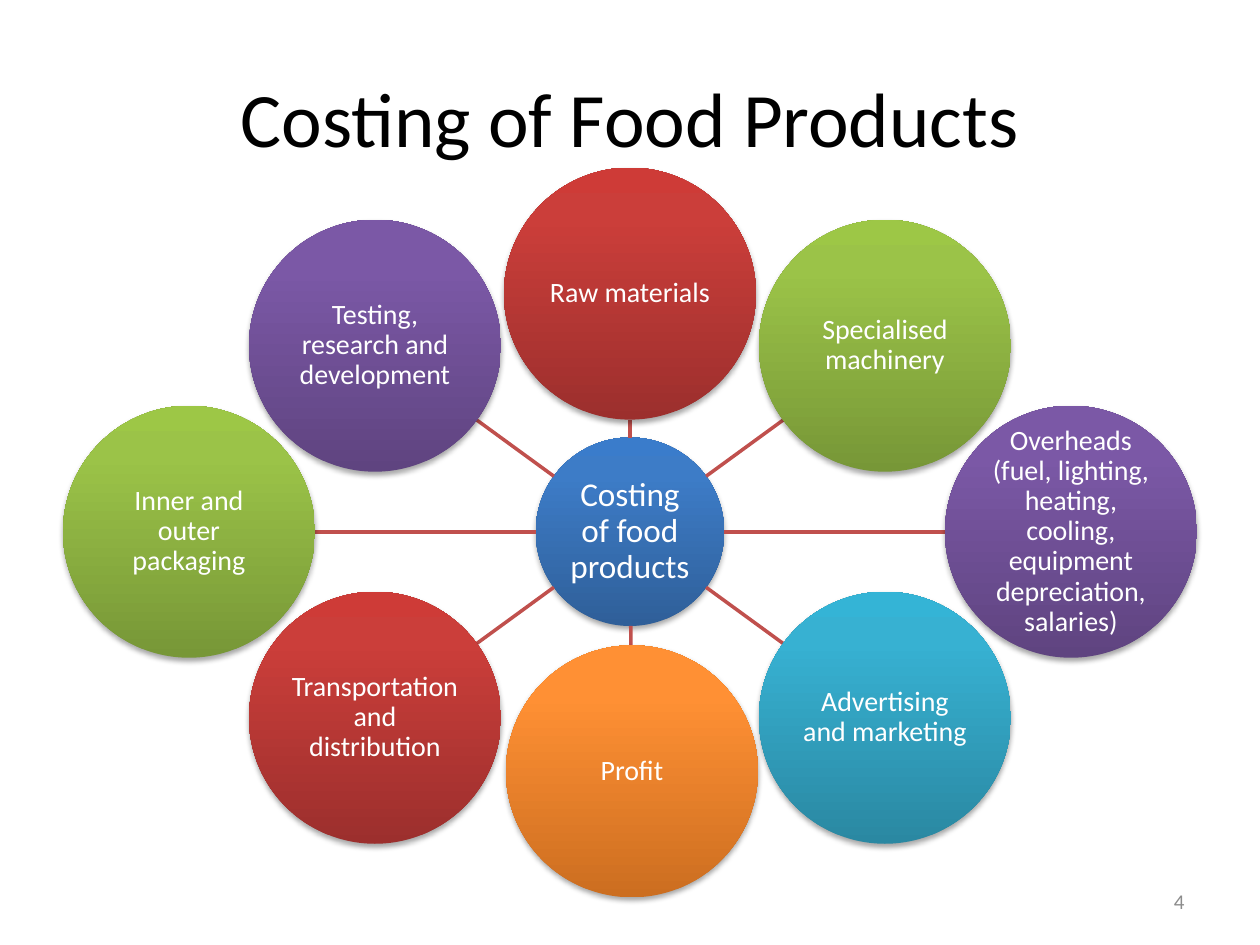
"""Build a slide with a hub of food product costs and the circles around it."""
from copy import deepcopy
from dataclasses import dataclass
from math import hypot

from lxml import etree
from pptx import Presentation, oxml
from pptx import util as u
from pptx.dml import color
from pptx.enum import shapes, text
from pptx.oxml import ns

FONT = "Calibri"
HUB_X, HUB_Y = 12.7, 10.72
HUB_RADIUS, COST_RADIUS = 1.9, 2.54
STEP_X, STEP_Y = 5.14, 3.75
SIDE_X = 8.89
STOPS = (0, 0.8, 1)

BLUE = ("2F5F99", "3D7CC7", "3A7CCB")
RED = ("9C2F2D", "CB3E3A", "CE3B37")
GREEN = ("779737", "9BC348", "9DC746")
PURPLE = ("5F4480", "7B58A6", "7C57A8")
TEAL = ("2A88A2", "37B1D2", "34B4D6")
ORANGE = ("CC6E20", "FF9034", "FF9136")

SHADOW = (
    f'<a:outerShdw {ns.nsdecls("a")} blurRad="40000" dist="23000" dir="5400000" '
    'rotWithShape="0"><a:srgbClr val="000000"><a:alpha val="35000"/>'
    "</a:srgbClr></a:outerShdw>"
)


@dataclass
class Cost:
    label: str
    dx: float
    dy: float
    shades: tuple[str, str, str]


COSTS = [
    Cost("Raw materials", 0, -4.8, RED),
    Cost("Specialised machinery", STEP_X, -STEP_Y, GREEN),
    Cost("Overheads (fuel, lighting, heating, cooling, equipment depreciation, salaries)",
         SIDE_X, 0, PURPLE),
    Cost("Advertising and marketing", STEP_X, STEP_Y, TEAL),
    Cost("Profit", 0.04, 4.83, ORANGE),
    Cost("Transportation and distribution", -STEP_X, STEP_Y, RED),
    Cost("Inner and outer packaging", -SIDE_X, 0, GREEN),
    Cost("Testing, research and development", -STEP_X, -STEP_Y, PURPLE),
]


def rgb(value: str) -> color.RGBColor:
    return color.RGBColor.from_string(value)


def write(box, words: str, *, size: float, hue: str, align=text.PP_ALIGN.CENTER,
          spacing: float | None = None, inset: float | None = None) -> None:
    frame = box.text_frame
    frame.word_wrap = True
    frame.vertical_anchor = text.MSO_ANCHOR.MIDDLE
    if inset is not None:
        frame.margin_left = frame.margin_right = u.Cm(inset)
        frame.margin_top = frame.margin_bottom = u.Cm(inset)
    para = frame.paragraphs[0]
    para.alignment = align
    if spacing is not None:
        para.line_spacing = spacing
    span = para.add_run()
    span.text = words
    span.font.name = FONT
    span.font.size = u.Pt(size)
    span.font.color.rgb = rgb(hue)


def add_circle(page, x: float, y: float, radius: float, words: str,
               shades: tuple[str, str, str], size: float) -> None:
    circle = page.shapes.add_shape(
        shapes.MSO_SHAPE.OVAL, u.Cm(x - radius), u.Cm(y - radius),
        u.Cm(2 * radius), u.Cm(2 * radius))
    circle.line.fill.background()
    circle.fill.gradient()
    circle.fill.gradient_angle = 90
    stop_list = next(circle.element.iter(ns.qn("a:gsLst")))
    stop_list.append(deepcopy(stop_list[0]))
    for stop, place, shade in zip(circle.fill.gradient_stops, STOPS, shades):
        stop.position = place
        stop.color.rgb = rgb(shade)
    circle.shadow.inherit = False
    next(circle.element.iter(ns.qn("a:effectLst"))).append(oxml.parse_xml(SHADOW))
    write(circle, words, size=size, hue="FFFFFF", spacing=0.9, inset=0.03)


def add_spoke(page, cost: Cost) -> None:
    length = hypot(cost.dx, cost.dy)
    start, end = HUB_RADIUS / length, 1 - COST_RADIUS / length
    spoke = page.shapes.add_connector(
        shapes.MSO_CONNECTOR.STRAIGHT,
        u.Cm(HUB_X + cost.dx * start), u.Cm(HUB_Y + cost.dy * start),
        u.Cm(HUB_X + cost.dx * end), u.Cm(HUB_Y + cost.dy * end))
    spoke.line.color.rgb = rgb("C0504D")
    spoke.line.width = u.Pt(2)
    etree.SubElement(spoke.element.spPr, ns.qn("a:effectLst"))


def main() -> None:
    deck = Presentation()
    deck.slide_width, deck.slide_height = u.Cm(25.4), u.Cm(19.05)
    page = deck.slides.add_slide(deck.slide_layouts[5])

    title = page.shapes.title
    title.left, title.top = u.Cm(1.27), u.Cm(0.76)
    title.width, title.height = u.Cm(22.86), u.Cm(3.18)
    write(title, "Costing of Food Products", size=44, hue="000000")

    add_circle(page, HUB_X, HUB_Y, HUB_RADIUS, "Costing of food products", BLUE, 19)
    for cost in COSTS:
        add_spoke(page, cost)
        add_circle(page, HUB_X + cost.dx, HUB_Y + cost.dy, COST_RADIUS,
                   cost.label, cost.shades, 16)

    number = page.shapes.add_textbox(u.Cm(18.21), u.Cm(17.65), u.Cm(5.92), u.Cm(1.02))
    write(number, "4", size=12, hue="8C8C8C", align=text.PP_ALIGN.RIGHT)

    deck.save("out.pptx")


if __name__ == "__main__":
    main()
